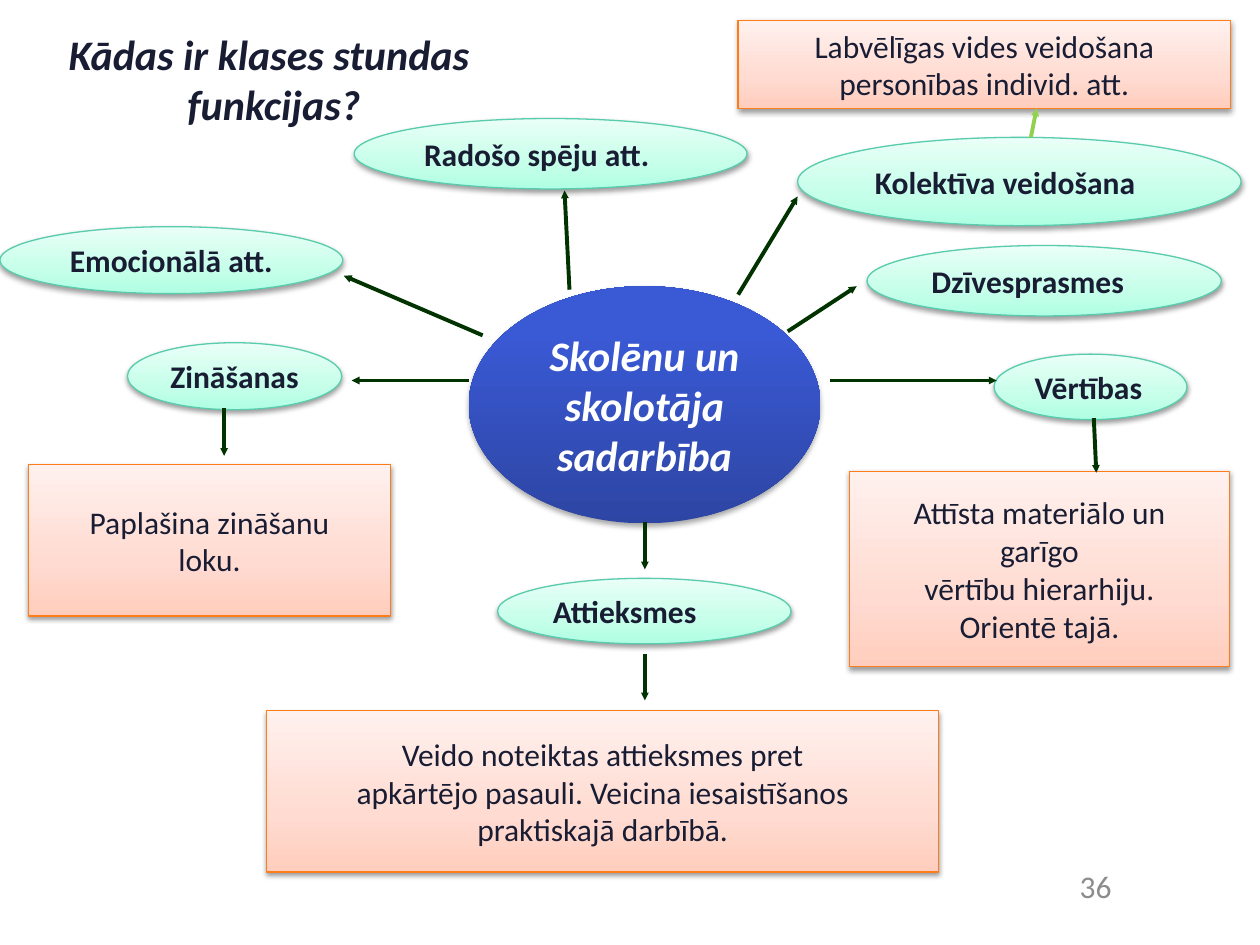
"""Build a slide that maps the functions of the class lesson."""
import copy

import lxml.etree
import pptx
import pptx.dml.color
import pptx.enum.shapes
import pptx.enum.text
import pptx.oxml.ns
import pptx.util

Cm, Pt = pptx.util.Cm, pptx.util.Pt
ALIGN = pptx.enum.text.PP_ALIGN
FORM = pptx.enum.shapes.MSO_SHAPE
MID = pptx.enum.text.MSO_ANCHOR.MIDDLE
qn = pptx.oxml.ns.qn

INK, GREEN, LIME = "191D34", "003300", "92D050"
PLAIN = {"name": "Calibri", "size": Pt(18), "bold": False, "italic": False}
BOLD = {**PLAIN, "bold": True}
HEAD = {**BOLD, "size": Pt(24), "italic": True}

KINDS = {
    "note": dict(form=FORM.RECTANGLE, font=PLAIN, ink=INK, line="FF7C1B", shade=(38, 1.6),
                 stops=((0, "FFCDBD"), (0.35, "FFDBD1"), (1, "FFF1EE"))),
    "role": dict(form=FORM.OVAL, font=BOLD, ink=INK, line="58CCAC", shade=(38, 1.6),
                 stops=((0, "AEFFE3"), (0.35, "C5FFEA"), (1, "E9FFF7"))),
    "core": dict(form=FORM.OVAL, font=HEAD, ink="FFFFFF", line=None, shade=(35, 1.8),
                 stops=((0, "2D45A3"), (0.8, "3A59D4"), (1, "3758D7"))),
}

TITLE = "Kādas ir klases stundas\v funkcijas?"
NODES = [
    ("note", "c", (17.12, 9.5, 7.67, 3.94),
     "Attīsta materiālo un\ngarīgo\nvērtību hierarhiju.\nOrientē tajā."),
    ("core", "c", (9.45, 5.77, 7.09, 4.78), "Skolēnu un\nskolotāja\nsadarbība"),
    ("role", "c", (2.57, 6.91, 4.32, 1.35), "Zināšanas"),
    ("role", "l", (20.04, 7.14, 3.89, 1.32), "Vērtības"),
    ("role", "l", (10.03, 11.66, 5.92, 1.32), "Attieksmes"),
    ("note", "c", (0.58, 9.37, 7.29, 3.05), "Paplašina zināšanu\nloku."),
    ("note", "c", (5.38, 14.33, 13.54, 3.25),
     "Veido noteiktas attieksmes pret\napkārtējo pasauli. Veicina iesaistīšanos\n"
     "praktiskajā darbībā."),
    ("role", "l", (16.08, 2.77, 8.94, 1.78), "Kolektīva veidošana"),
    ("role", "c", (0, 4.57, 6.91, 1.35), "Emocionālā att."),
    ("role", "l", (7.14, 2.39, 7.92, 1.42), "Radošo spēju att."),
    ("role", "l", (17.48, 4.95, 7.14, 1.42), "Dzīvesprasmes"),
    ("note", "c", (14.88, 0.41, 9.93, 1.78),
     "Labvēlīgas vides veidošana\npersonības individ. att."),
]
ARROWS = [
    (GREEN, (9.45, 7.67, 7.09, 7.67)),
    (GREEN, (16.74, 7.67, 20.09, 7.67)),
    (GREEN, (13, 10.52, 13, 11.48)),
    (GREEN, (4.52, 8.23, 4.52, 9.19)),
    (GREEN, (22.05, 8.43, 22.1, 9.53)),
    (GREEN, (13, 13.18, 13, 14.12)),
    (GREEN, (15.88, 6.68, 17.27, 5.77)),
    (GREEN, (9.73, 6.76, 6.93, 5.56)),
    (GREEN, (11.48, 5.84, 11.38, 3.84)),
    (GREEN, (14.88, 5.94, 16.08, 3.96)),
    (LIME, (20.78, 2.77, 20.9, 2.18)),
]
SIDES = {"l": ALIGN.LEFT, "c": ALIGN.CENTER, "r": ALIGN.RIGHT}


def paint(color, code):
    color.rgb = pptx.dml.color.RGBColor.from_string(code)


def put(obj, vals):
    for key, val in vals.items():
        setattr(obj, key, val)


def add(root, tag, **vals):
    return lxml.etree.SubElement(root, qn(tag), vals)


def write(shape, text, font, ink, side, wrap):
    frame = shape.text_frame
    frame.text = text
    put(frame, {"word_wrap": wrap, "vertical_anchor": MID,
                "auto_size": pptx.enum.text.MSO_AUTO_SIZE.NONE})
    for para in frame.paragraphs:
        para.alignment = SIDES[side]
        for run in para.runs:
            put(run.font, font)
            paint(run.font.color, ink)


def blend(shape, stops):
    fill = shape.fill
    fill.gradient()
    fill.gradient_angle = 90
    rows = shape.element.spPr.find(".//" + qn("a:gsLst"))
    rows.append(copy.deepcopy(rows[0]))
    for stop, (pos, code) in zip(fill.gradient_stops, stops):
        stop.position = pos
        paint(stop.color, code)


def shade(shape, alpha, dist):
    shape.shadow.inherit = False
    root = shape.element.spPr.find(qn("a:effectLst"))
    drop = add(root, "a:outerShdw", blurRad=str(Pt(3.1)), dist=str(Pt(dist)),
               dir="5400000", rotWithShape="0")
    add(add(drop, "a:srgbClr", val="000000"), "a:alpha", val=str(alpha * 1000))


def node(slide, kind, side, box, text):
    look = KINDS[kind]
    shape = slide.shapes.add_shape(look["form"], *map(Cm, box))
    blend(shape, look["stops"])
    if look["line"]:
        shape.line.width = Pt(0.75)
        paint(shape.line.color, look["line"])
    else:
        shape.line.fill.background()
    shade(shape, *look["shade"])
    write(shape, text, look["font"], look["ink"], side, False)


def arrow(slide, code, ends):
    kind = pptx.enum.shapes.MSO_CONNECTOR.STRAIGHT
    link = slide.shapes.add_connector(kind, *map(Cm, ends))
    link.line.width = Pt(2.25)
    paint(link.line.color, code)
    root = link.element.spPr
    add(root.find(qn("a:ln")), "a:tailEnd", type="triangle", w="sm", len="sm")
    add(root, "a:effectLst")


def main():
    deck = pptx.Presentation()
    put(deck, {"slide_width": Cm(25.4), "slide_height": Cm(19.05)})
    slide = deck.slides.add_slide(deck.slide_layouts[5])
    title = slide.shapes.title
    put(title, {"left": Cm(0), "top": Cm(0), "width": Cm(10.85), "height": Cm(3.18)})
    write(title, TITLE, HEAD, INK, "c", True)
    page = slide.shapes.add_textbox(Cm(18.21), Cm(17.35), Cm(4.45), Cm(1.02))
    write(page, "36", PLAIN, "8C8C8C", "r", True)
    for item in NODES:
        node(slide, *item)
    for item in ARROWS:
        arrow(slide, *item)
    deck.save("out.pptx")


if __name__ == "__main__":
    main()
